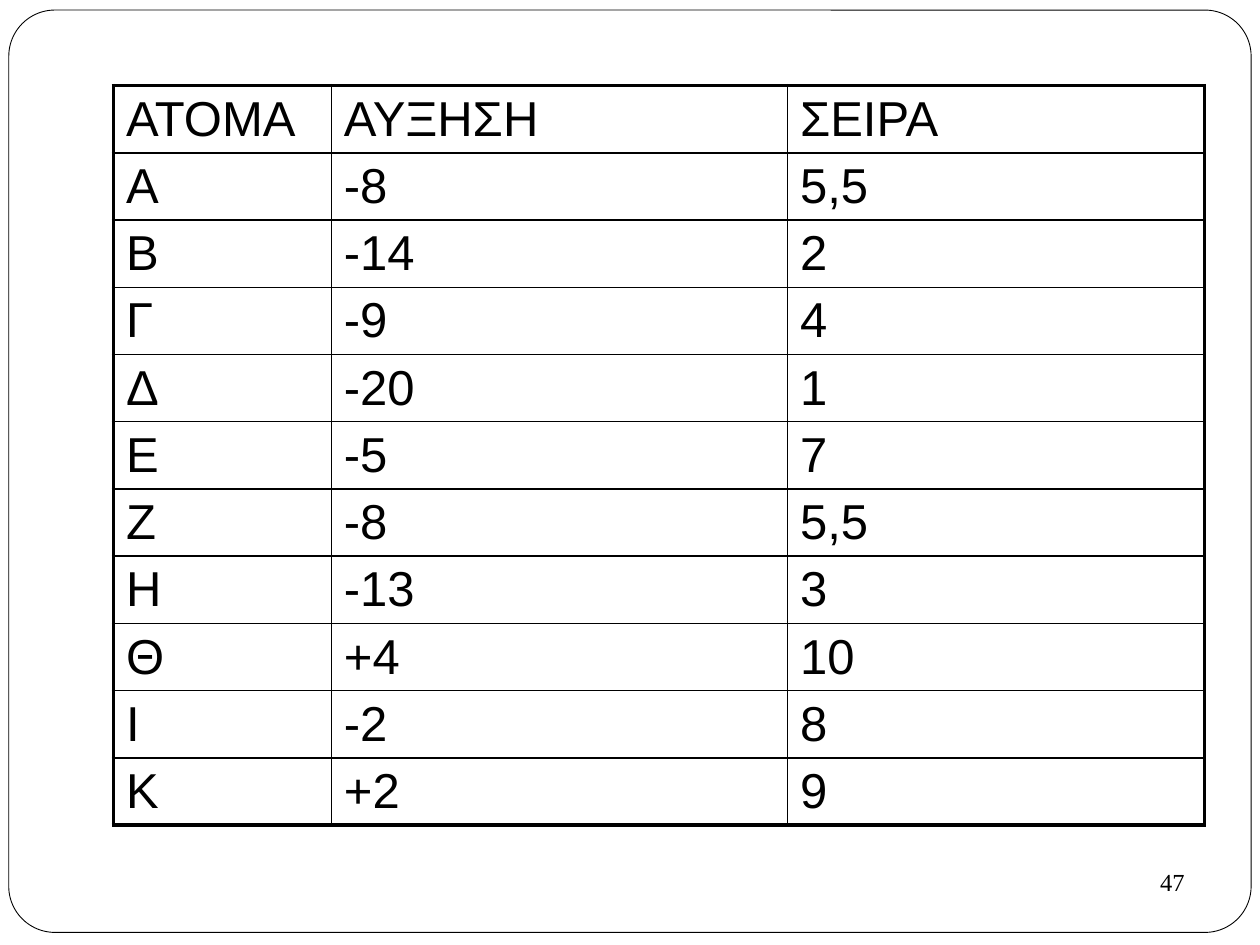
from typing import NamedTuple

from lxml import etree
from pptx import Presentation
from pptx.dml.color import RGBColor
from pptx.enum.shapes import MSO_SHAPE
from pptx.enum.text import MSO_ANCHOR, PP_ALIGN
from pptx.oxml.ns import qn
from pptx.util import Inches, Pt

BLACK = RGBColor(0x00, 0x00, 0x00)
WHITE = RGBColor(0xFF, 0xFF, 0xFF)
ROUNDED_RECTANGLE = MSO_SHAPE.ROUNDED_RECTANGLE
MIDDLE = MSO_ANCHOR.MIDDLE
RIGHT = PP_ALIGN.RIGHT

TABLE_FONT = {"name": "Arial", "size": Pt(28)}
NUMBER_FONT = {"name": "Times New Roman", "size": Pt(14)}
CELL_FORMAT = {
    "margin_left": Inches(0.1),
    "margin_right": Inches(0.1),
    "margin_top": Inches(0.04),
    "margin_bottom": Inches(0.04),
    "vertical_anchor": MIDDLE,
}
OUTER_BORDER = Pt(2.25)
INNER_BORDER = Pt(1)
COLUMN_WIDTHS = (1.73, 3.62, 3.31)
TABLE_HEIGHT = 5.87


class Ranking(NamedTuple):
    person: str
    increase: str
    rank: str


RANKINGS = (
    Ranking("ΑΤΟΜΑ", "ΑΥΞΗΣΗ", "ΣΕΙΡΑ"),
    Ranking("Α", "-8", "5,5"),
    Ranking("Β", "-14", "2"),
    Ranking("Γ", "-9", "4"),
    Ranking("Δ", "-20", "1"),
    Ranking("Ε", "-5", "7"),
    Ranking("Ζ", "-8", "5,5"),
    Ranking("Η", "-13", "3"),
    Ranking("Θ", "+4", "10"),
    Ranking("Ι", "-2", "8"),
    Ranking("Κ", "+2", "9"),
)


def write_text(paragraph, text: str, font_format: dict) -> None:
    run = paragraph.add_run()
    run.text = text
    for name, value in font_format.items():
        setattr(run.font, name, value)
    run.font.color.rgb = BLACK


def set_borders(cell, widths: dict) -> None:
    """Add black borders; they must come before the fill in the cell properties."""
    properties = cell._tc.get_or_add_tcPr()
    for position, (tag, width) in enumerate(widths.items()):
        line = etree.Element(qn(f"a:{tag}"), w=str(width))
        fill = etree.SubElement(line, qn("a:solidFill"))
        etree.SubElement(fill, qn("a:srgbClr"), val=str(BLACK))
        properties.insert(position, line)


def add_frame(slide) -> None:
    frame = slide.shapes.add_shape(
        ROUNDED_RECTANGLE, Inches(0.07), Inches(0.08), Inches(9.86), Inches(7.32)
    )
    frame.adjustments[0] = 0.05
    frame.shadow.inherit = False
    frame.fill.solid()
    frame.fill.fore_color.rgb = WHITE
    frame.line.color.rgb = BLACK
    frame.line.width = Pt(0.5)


def add_ranking_table(slide) -> None:
    last_row = len(RANKINGS) - 1
    last_column = len(COLUMN_WIDTHS) - 1
    table = slide.shapes.add_table(
        len(RANKINGS), len(COLUMN_WIDTHS), Inches(0.9), Inches(0.68),
        Inches(sum(COLUMN_WIDTHS)), Inches(TABLE_HEIGHT),
    ).table
    table.first_row = table.horz_banding = False
    for column, width in zip(table.columns, COLUMN_WIDTHS):
        column.width = Inches(width)

    for row_index, ranking in enumerate(RANKINGS):
        table.rows[row_index].height = Inches(TABLE_HEIGHT / len(RANKINGS))
        for column_index, text in enumerate(ranking):
            cell = table.cell(row_index, column_index)
            cell.fill.background()
            for name, value in CELL_FORMAT.items():
                setattr(cell, name, value)
            write_text(cell.text_frame.paragraphs[0], text, TABLE_FONT)
            # Thick lines around the table, thin lines inside
            on_edge = {
                "lnL": column_index == 0,
                "lnR": column_index == last_column,
                "lnT": row_index == 0,
                "lnB": row_index == last_row,
            }
            set_borders(cell, {
                tag: OUTER_BORDER if outer else INNER_BORDER
                for tag, outer in on_edge.items()
            })


def add_slide_number(slide) -> None:
    box = slide.shapes.add_textbox(
        Inches(7.17), Inches(6.83), Inches(2.33), Inches(0.52)
    )
    box.text_frame.word_wrap = True
    paragraph = box.text_frame.paragraphs[0]
    paragraph.alignment = RIGHT
    write_text(paragraph, "47", NUMBER_FONT)


def main() -> None:
    presentation = Presentation()
    presentation.slide_width = Inches(10)
    presentation.slide_height = Inches(7.5)
    # Blank layout: the slide has no title
    slide = presentation.slides.add_slide(presentation.slide_layouts[6])
    add_frame(slide)
    add_ranking_table(slide)
    add_slide_number(slide)
    presentation.save("out.pptx")


if __name__ == "__main__":
    main()
